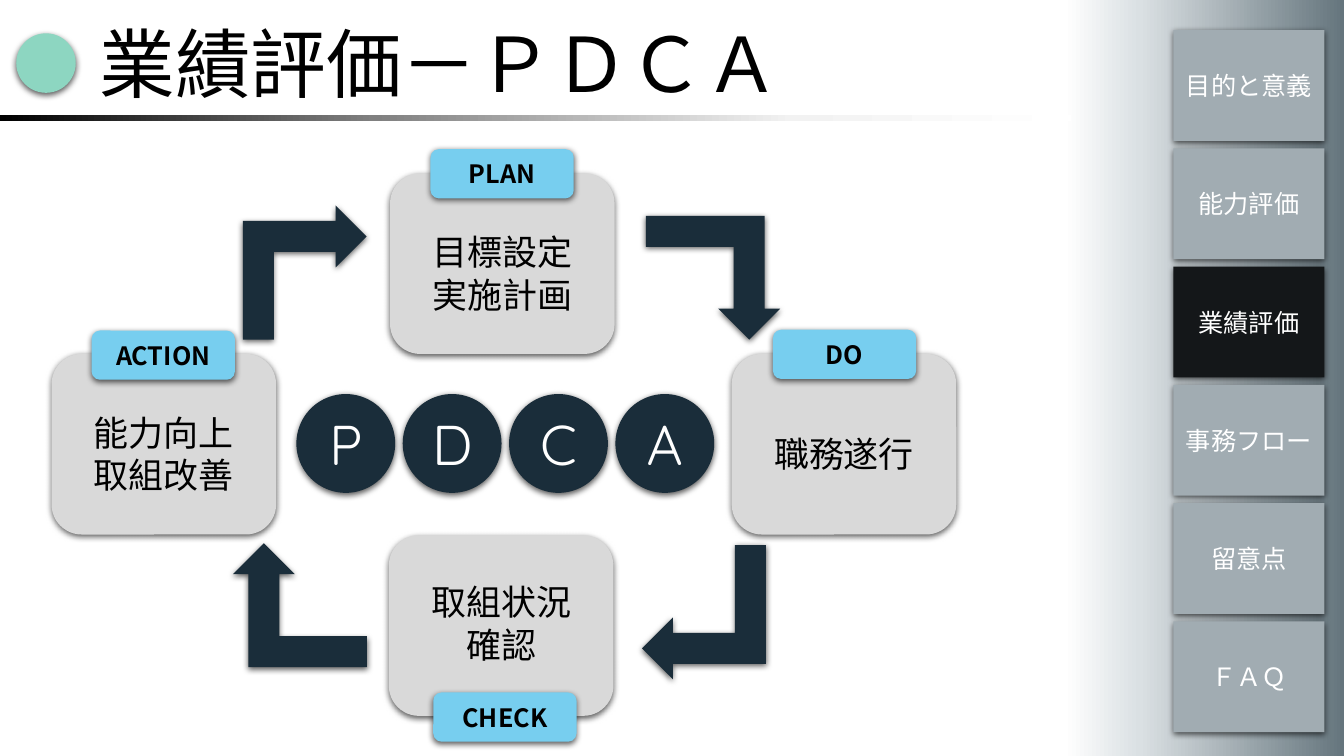
"""Build a slide showing the PDCA cycle of performance evaluation."""
from dataclasses import dataclass

from lxml import etree
from pptx import Presentation
from pptx.dml.color import RGBColor
from pptx.enum.shapes import MSO_SHAPE
from pptx.enum.text import MSO_ANCHOR, PP_ALIGN
from pptx.oxml.ns import qn
from pptx.shapes.autoshape import Shape
from pptx.slide import Slide
from pptx.util import Cm, Pt

RECTANGLE = MSO_SHAPE.RECTANGLE
ROUNDED = MSO_SHAPE.ROUNDED_RECTANGLE
OVAL = MSO_SHAPE.OVAL
BENT_ARROW = MSO_SHAPE.BENT_UP_ARROW
MIDDLE = MSO_ANCHOR.MIDDLE
CENTER = PP_ALIGN.CENTER
LEFT = PP_ALIGN.LEFT


@dataclass(frozen=True)
class Theme:
    """Colours, fonts and type sizes."""
    navy: str = "1A2D3A"
    card: str = "D9D9D9"
    label: str = "77CEEF"
    tab: str = "A1ACB2"
    active_tab: str = "141719"
    mint: str = "8DD6C1"
    black: str = "000000"
    white: str = "FFFFFF"
    sidebar: tuple = ((0, "FFFFFF"), (27, "DAE0E3"), (100, "65757D"))
    rule: tuple = ((0, "000000"), (35, "808080"), (74, "F2F2F2"), (100, "FFFFFF"))
    body_font: str = "Noto Sans CJK JP"
    tab_font: str = "Noto Sans CJK SC"
    letter_font: str = "Quicksand"
    title_size: float = 54
    letter_size: float = 40
    body_size: float = 25
    small_size: float = 18


@dataclass(frozen=True)
class Area:
    """A place on the slide in centimetres."""
    left: float
    top: float
    width: float
    height: float


@dataclass(frozen=True)
class Style:
    """The look of a piece of text."""
    font: str
    size: float
    color: str
    bold: bool = False
    align: PP_ALIGN = CENTER
    line_spacing: float = 1.0
    space_after: float = 0


@dataclass(frozen=True)
class Stage:
    """A card of the cycle with its label."""
    name: str
    text: str
    card: tuple[float, float]
    label: tuple[float, float]
    top_inset: float = 0.68


@dataclass(frozen=True)
class Turn:
    """A bent arrow between two stages."""
    left: float
    top: float
    flip: str
    rotation: int = 0


THEME = Theme()
TITLE = Style(THEME.body_font, THEME.title_size, THEME.black, align=LEFT)
CARD = Style(THEME.body_font, THEME.body_size, THEME.black,
             line_spacing=0.9, space_after=3.5)
LABEL = Style(THEME.body_font, THEME.small_size, THEME.black, bold=True)
LETTER = Style(THEME.letter_font, THEME.letter_size, THEME.white)
TAB = Style(THEME.tab_font, THEME.small_size, THEME.white)

STAGES = (
    Stage("PLAN", "目標設定\n実施計画", (9.83, 4.37), (10.85, 3.76)),
    Stage("DO", "職務遂行", (18.44, 8.92), (19.48, 8.31)),
    Stage("CHECK", "取組状況\n確認", (9.8, 13.49), (10.92, 17.45), 0.08),
    Stage("ACTION", "能力向上\n取組改善", (1.3, 8.92), (2.31, 8.33)),
)
TURNS = (
    Turn(16.28, 5.44, "flipV"),
    Turn(5.99, 5.31, "flipV", 270),
    Turn(16.05, 13.87, "flipH", 270),
    Turn(5.87, 13.69, "flipH"),
)
TABS = ("目的と意義", "能力評価", "業績評価", "事務フロー", "留意点", "ＦＡＱ")
ACTIVE_TAB = "業績評価"


def add_text(box: Shape, text: str, style: Style, insets: dict[str, float] | None = None) -> None:
    """Fill a shape with one paragraph for each line of text."""
    frame = box.text_frame
    margins = {f"margin_{side}": Cm(inset) for side, inset in (insets or {}).items()}
    for name, value in {"word_wrap": True, "vertical_anchor": MIDDLE, **margins}.items():
        setattr(frame, name, value)
    para_format = {"alignment": style.align, "line_spacing": style.line_spacing,
                   "space_after": Pt(style.space_after)}
    span_format = {"name": style.font, "size": Pt(style.size), "bold": style.bold}
    for index, line in enumerate(text.split("\n")):
        para = frame.add_paragraph() if index else frame.paragraphs[0]
        for name, value in para_format.items():
            setattr(para, name, value)
        span = para.add_run()
        span.text = line
        span.font.color.rgb = RGBColor.from_string(style.color)
        for name, value in span_format.items():
            setattr(span.font, name, value)
        properties = span.font.fill._xPr
        etree.SubElement(properties, qn("a:ea"), typeface=style.font)


def add_shadow(box: Shape) -> None:
    """Give a shape a soft shadow below it."""
    effects = box.element.spPr.find(qn("a:effectLst"))
    values = {"blurRad": Pt(4.5), "dist": Pt(1.5), "dir": 90 * 60000, "rotWithShape": 0}
    shadow = etree.SubElement(effects, qn("a:outerShdw"),
                              {name: str(int(value)) for name, value in values.items()})
    color = etree.SubElement(shadow, qn("a:srgbClr"), val=THEME.black)
    etree.SubElement(color, qn("a:alpha"), val="63000")


def add_box(page: Slide, kind: MSO_SHAPE, area: Area) -> Shape:
    """Add a preset shape without line or shadow."""
    box = page.shapes.add_shape(kind, Cm(area.left), Cm(area.top),
                                Cm(area.width), Cm(area.height))
    box.shadow.inherit = False
    box.line.fill.background()
    return box


def add_solid(page: Slide, kind: MSO_SHAPE, area: Area, color: str) -> Shape:
    """Add a shape with a plain fill and a shadow."""
    box = add_box(page, kind, area)
    box.fill.solid()
    box.fill.fore_color.rgb = RGBColor.from_string(color)
    add_shadow(box)
    return box


def add_gradient(page: Slide, area: Area, stops: tuple) -> None:
    """Add a rectangle whose colours run from left to right."""
    box = add_box(page, RECTANGLE, area)
    box.fill.gradient()
    box.fill.gradient_angle = 0
    stop_list = box.element.spPr.find(".//" + qn("a:gsLst"))
    stop_list.clear()
    for position, color in stops:
        stop = etree.SubElement(stop_list, qn("a:gs"), pos=str(position * 1000))
        etree.SubElement(stop, qn("a:srgbClr"), val=color)


def add_turn(page: Slide, turn: Turn) -> None:
    """Add a bent arrow, flipped and rotated."""
    arrow = add_solid(page, BENT_ARROW, Area(turn.left, turn.top, 3.38, 3.12), THEME.navy)
    arrow.rotation = turn.rotation
    arrow.element.spPr.find(qn("a:xfrm")).set(turn.flip, "1")


def add_stage(page: Slide, stage: Stage) -> None:
    """Add a card and the label on its edge."""
    card = add_solid(page, ROUNDED, Area(*stage.card, 5.66, 4.55), THEME.card)
    add_text(card, stage.text, CARD,
             {"left": 0.08, "right": 0.08, "top": stage.top_inset, "bottom": 0.08})
    label = add_solid(page, ROUNDED, Area(*stage.label, 3.61, 1.24), THEME.label)
    add_text(label, stage.name, LABEL)


def main() -> None:
    """Build the slide and save the deck."""
    deck = Presentation()
    deck.slide_width, deck.slide_height = Cm(33.87), Cm(19.05)
    page = deck.slides.add_slide(deck.slide_layouts[6])
    for turn in TURNS:
        add_turn(page, turn)
    for stage in STAGES:
        add_stage(page, stage)
    for index, letter in enumerate("PDCA"):
        circle = add_solid(page, OVAL, Area(7.47 + index * 2.68, 9.93, 2.49, 2.49), THEME.navy)
        add_text(circle, letter, LETTER)
    add_gradient(page, Area(26.82, 0, 7.05, 19.05), THEME.sidebar)
    for index, name in enumerate(TABS):
        color = THEME.active_tab if name == ACTIVE_TAB else THEME.tab
        tab = add_solid(page, RECTANGLE, Area(29.57, 0.76 + index * 2.98, 3.81, 2.79), color)
        add_text(tab, name, TAB)
    add_solid(page, OVAL, Area(0.41, 0.84, 1.5, 1.5), THEME.mint)
    title = page.shapes.add_textbox(Cm(2.26), Cm(0.71), Cm(23.29), Cm(1.7))
    add_text(title, "業績評価－ＰＤＣＡ", TITLE)
    add_gradient(page, Area(0, 2.9, 27, 0.15), THEME.rule)
    deck.save("out.pptx")


if __name__ == "__main__":
    main()
